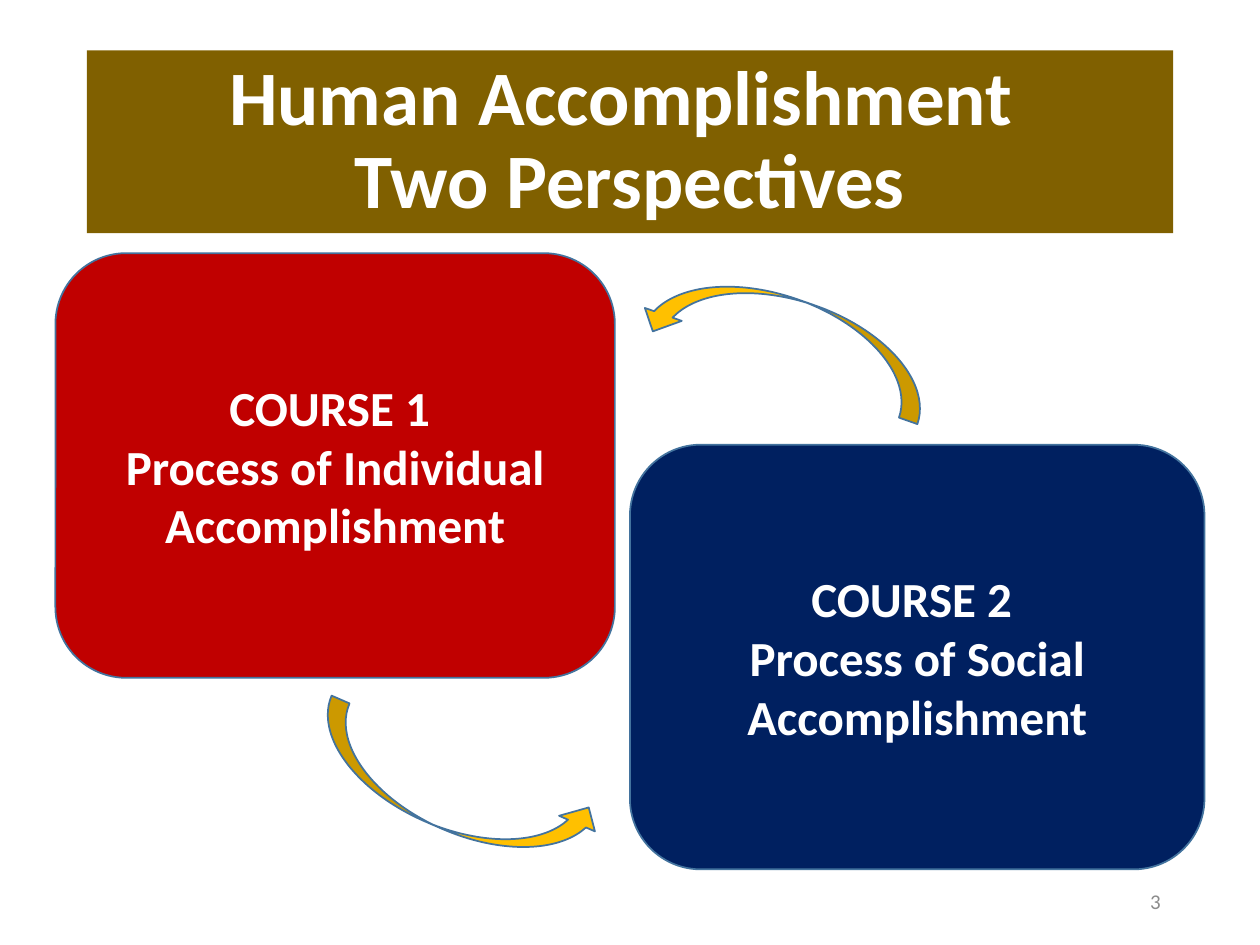
import pptx
import pptx.util
import pptx.dml.color
import pptx.enum.shapes
import pptx.enum.text
from dataclasses import dataclass

Inches, Pt = pptx.util.Inches, pptx.util.Pt
Kind = pptx.enum.shapes.MSO_SHAPE
Align = pptx.enum.text.PP_ALIGN


@dataclass(frozen=True)
class Theme:
    font: str = "Calibri"
    white: str = "FFFFFF"
    gray: str = "8C8C8C"
    brown: str = "806000"
    red: str = "C00000"
    navy: str = "002060"
    gold: str = "FFC000"
    edge: str = "43739E"
    head: int = 44
    body: int = 28
    note: int = 12


theme = Theme()
deck = pptx.Presentation()
deck.slide_width, deck.slide_height = Inches(10), Inches(7.5)
slide = deck.slides.add_slide(deck.slide_layouts[6])


def draw(kind, box, fill, edge=None):
    shape = slide.shapes.add_shape(kind, *map(Inches, box))
    shape.shadow.inherit = False
    shape.fill.solid()
    shape.fill.fore_color.rgb = pptx.dml.color.RGBColor.from_string(fill)
    if edge:
        shape.line.color.rgb = pptx.dml.color.RGBColor.from_string(edge)
        shape.line.width = Pt(1)
    else:
        shape.line.fill.background()
    return shape


def write(shape, paras, size, color=theme.white, bold=True, align=Align.CENTER):
    """Fill a shape with paragraphs, each a list of lines."""
    frame = shape.text_frame
    frame.word_wrap = True
    frame.vertical_anchor = pptx.enum.text.MSO_ANCHOR.MIDDLE
    for i, lines in enumerate(paras):
        para = frame.add_paragraph() if i else frame.paragraphs[0]
        para.alignment = align
        for j, line in enumerate(lines):
            if j:
                para.add_line_break()
            run = para.add_run()
            run.text = line
            run.font.name = theme.font
            run.font.size = Pt(size)
            run.font.bold = bold
            run.font.color.rgb = pptx.dml.color.RGBColor.from_string(color)


title = draw(Kind.RECTANGLE, (0.69, 0.4, 8.62, 1.45), theme.brown)
write(title, [["Human Accomplishment ", "Two Perspectives"]], theme.head)
title.text_frame.paragraphs[0].line_spacing = 0.9

number = slide.shapes.add_textbox(*map(Inches, (7.06, 6.95, 2.25, 0.4)))
write(number, [["3"]], theme.note, theme.gray, False, Align.RIGHT)

courses = [
    ((0.44, 2.01, 4.44, 3.37), theme.red, "COURSE 1 ", "Process of Individual Accomplishment"),
    ((5, 3.53, 4.56, 3.37), theme.navy, "COURSE 2 ", "Process of Social Accomplishment"),
]
for box, fill, name, topic in courses:
    card = draw(Kind.FLOWCHART_ALTERNATE_PROCESS, box, fill, theme.edge)
    write(card, [[name], [topic]], theme.body)

for left, top, turn in [(2.41, 5.97, 23.5), (5.07, 2.37, 199.3)]:
    arrow = draw(Kind.CURVED_UP_ARROW, (left, top, 2.38, 0.62), theme.gold, theme.edge)
    arrow.rotation = turn

deck.save("out.pptx")
